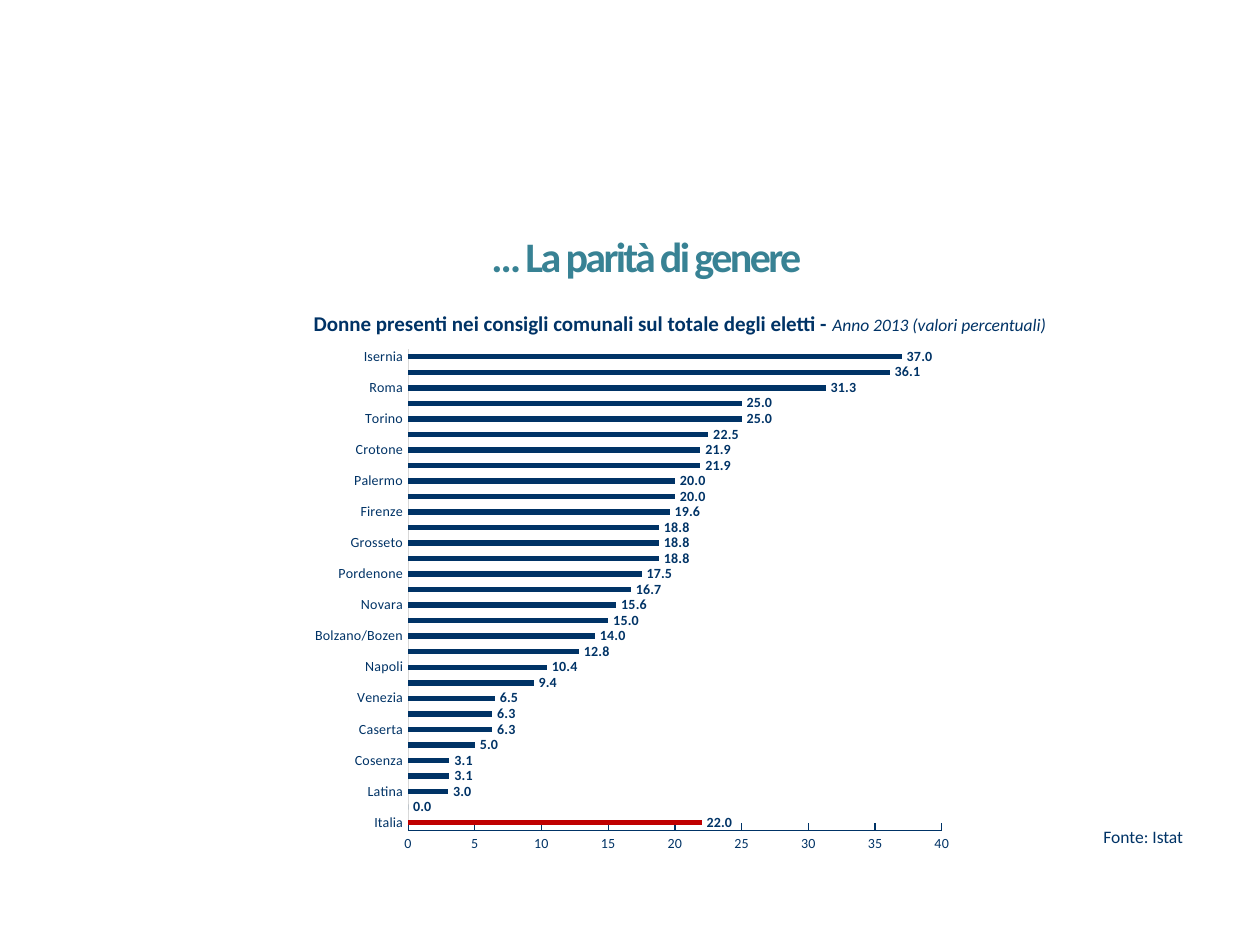
from lxml.etree import fromstring
from pptx import Presentation
from pptx.chart.data import CategoryChartData
from pptx.dml.color import RGBColor
from pptx.enum.chart import XL_CHART_TYPE, XL_LABEL_POSITION, XL_TICK_MARK
from pptx.enum.text import MSO_ANCHOR, PP_ALIGN
from pptx.util import Pt

NAVY = RGBColor(0x00, 0x33, 0x66)
TEAL = RGBColor(0x38, 0x82, 0x94)
RED = RGBColor(0xC0, 0x00, 0x00)
GRAY = RGBColor(0xD9, 0xD9, 0xD9)
WHITE = RGBColor(0xFF, 0xFF, 0xFF)

PLOT_LAYOUT = (
    '<c:layout xmlns:c="http://schemas.openxmlformats.org/drawingml/2006/chart">'
    '<c:manualLayout><c:layoutTarget val="inner"/>'
    '<c:xMode val="edge"/><c:yMode val="edge"/>'
    '<c:x val="0.16"/><c:y val="0.02"/><c:w val="0.81"/><c:h val="0.92"/>'
    '</c:manualLayout></c:layout>'
)

WOMEN_SHARE = [
    ("Italia", 22), ("", 0), ("Latina", 3), ("", 3.1),
    ("Cosenza", 3.1), ("", 5), ("Caserta", 6.3), ("", 6.3),
    ("Venezia", 6.5), ("", 9.4), ("Napoli", 10.4), ("", 12.8),
    ("Bolzano/Bozen", 14), ("", 15), ("Novara", 15.6), ("", 16.7),
    ("Pordenone", 17.5), ("", 18.8), ("Grosseto", 18.8), ("", 18.8),
    ("Firenze", 19.6), ("", 20), ("Palermo", 20), ("", 21.9),
    ("Crotone", 21.9), ("", 22.5), ("Torino", 25), ("", 25),
    ("Roma", 31.3), ("", 36.1), ("Isernia", 37),
]


class SlideBuilder:
    font_name = "Calibri"
    color = NAVY

    def __init__(self, slide):
        self.slide = slide

    def style(self, font, size, color=None, bold=False, italic=False):
        font.name = self.font_name
        font.size = Pt(size)
        font.color.rgb = color or self.color
        font.bold = bold
        font.italic = italic

    def text(self, box, text, size, color=None, bold=False, align=PP_ALIGN.LEFT, spacing=0):
        shape = self.slide.shapes.add_textbox(*map(Pt, box))
        shape.text_frame.word_wrap = True
        shape.text_frame.text = text
        paragraph = shape.text_frame.paragraphs[0]
        paragraph.alignment = align
        run = paragraph.runs[0]
        self.style(run.font, size, color, bold)
        if spacing:
            run.font._element.set("spc", str(round(spacing * 100)))

    def heading_table(self, box, heading, note):
        table = self.slide.shapes.add_table(1, 1, *map(Pt, box)).table
        table.first_row = table.horz_banding = False
        cell = table.cell(0, 0)
        cell.fill.solid()
        cell.fill.fore_color.rgb = WHITE
        cell.vertical_anchor = MSO_ANCHOR.BOTTOM
        cell.margin_left = cell.margin_right = cell.margin_top = Pt(0.75)
        cell.margin_bottom = Pt(0)
        paragraph = cell.text_frame.paragraphs[0]
        paragraph.text = heading
        self.style(paragraph.runs[0].font, 12, bold=True)
        run = paragraph.add_run()
        run.text = note
        self.style(run.font, 10, italic=True)

    def axis(self, axis, tick_mark, line_color):
        axis.has_major_gridlines = False
        axis.major_tick_mark = tick_mark
        axis.minor_tick_mark = XL_TICK_MARK.NONE
        axis.format.line.color.rgb = line_color
        axis.format.line.width = Pt(0.75)
        self.style(axis.tick_labels.font, 8)

    def bar_chart(self, box, rows, highlight):
        data = CategoryChartData()
        data.categories = [name for name, value in rows]
        data.add_series("Series 1", [value for name, value in rows])
        chart = self.slide.shapes.add_chart(
            XL_CHART_TYPE.BAR_CLUSTERED, *map(Pt, box), data
        ).chart
        chart.has_legend = chart.has_title = False
        self.style(chart.font, 8)
        self.axis(chart.category_axis, XL_TICK_MARK.NONE, GRAY)
        value_axis = chart.value_axis
        self.axis(value_axis, XL_TICK_MARK.INSIDE, NAVY)
        value_axis.minimum_scale = 0
        value_axis.maximum_scale = 40
        value_axis.major_unit = 5
        value_axis.tick_labels.number_format = "#,##0"
        value_axis.tick_labels.number_format_is_linked = False

        plot = chart.plots[0]
        plot.gap_width = 182
        plot.vary_by_categories = False
        series = plot.series[0]
        for item, color in ((series, NAVY), (series.points[highlight], RED)):
            item.format.fill.solid()
            item.format.fill.fore_color.rgb = color
        labels = series.data_labels
        labels.show_value = True
        labels.number_format = "#,##0.0"
        labels.number_format_is_linked = False
        labels.position = XL_LABEL_POSITION.OUTSIDE_END
        self.style(labels.font, 8, bold=True)

        plot_area = chart._chartSpace.chart.plotArea
        for layout in plot_area.xpath("c:layout"):
            plot_area.remove(layout)
        plot_area.insert(0, fromstring(PLOT_LAYOUT))


def main():
    presentation = Presentation()
    presentation.slide_width = Pt(720)
    presentation.slide_height = Pt(540)
    builder = SlideBuilder(presentation.slides.add_slide(presentation.slide_layouts[6]))
    builder.text((42.5, 128, 657.5, 36), "… La parità di genere ", 24, TEAL, True,
                 PP_ALIGN.CENTER, -1.5)
    builder.heading_table((178.5, 161, 459.5, 31.5),
                          "Donne presenti nei consigli comunali sul totale degli eletti - ",
                          "Anno 2013 (valori percentuali)")
    builder.text((623.5, 468.5, 88, 19.5), "Fonte: Istat", 10)
    builder.bar_chart((173, 193.5, 376.5, 299), WOMEN_SHARE, 0)
    presentation.save("out.pptx")


if __name__ == "__main__":
    main()
